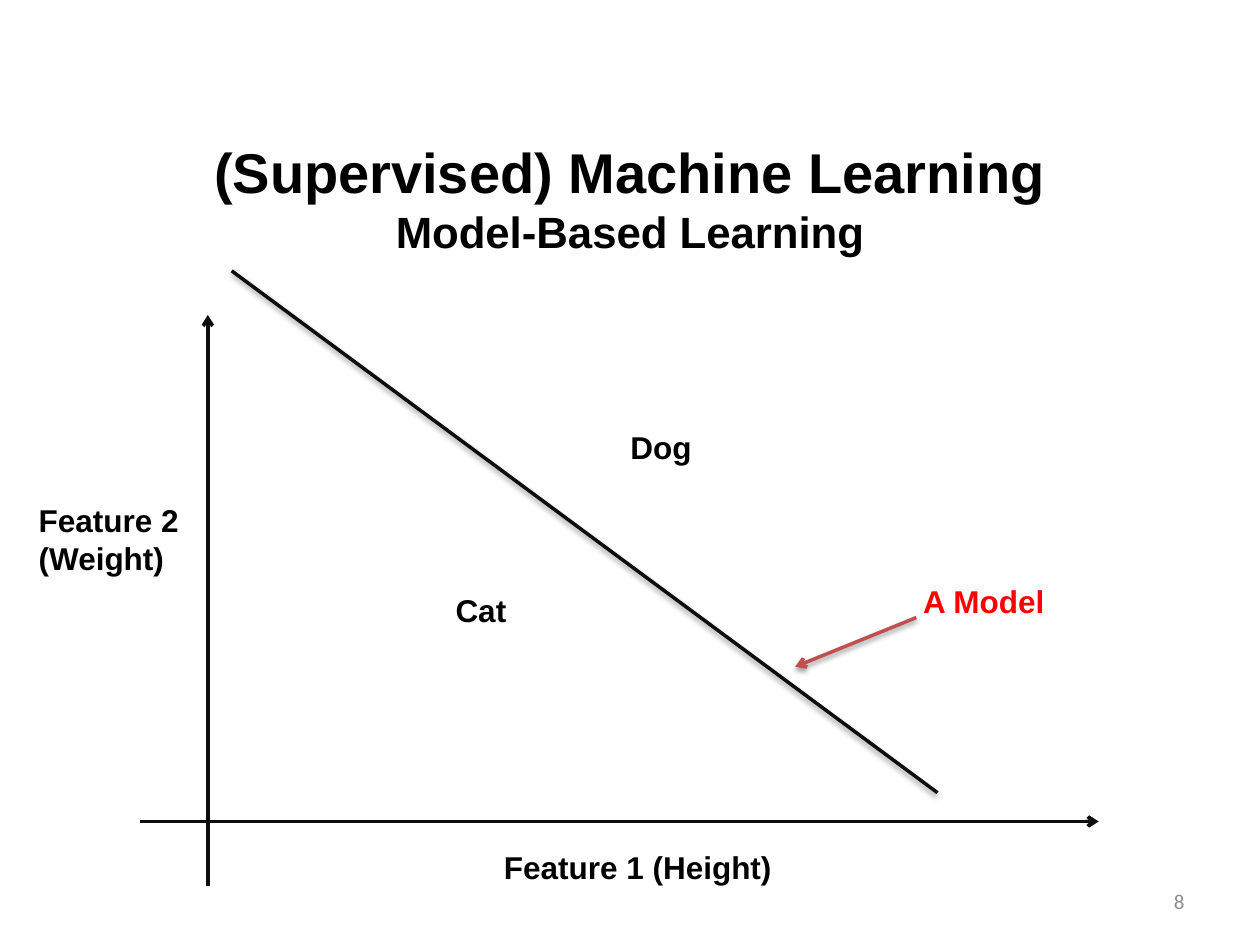
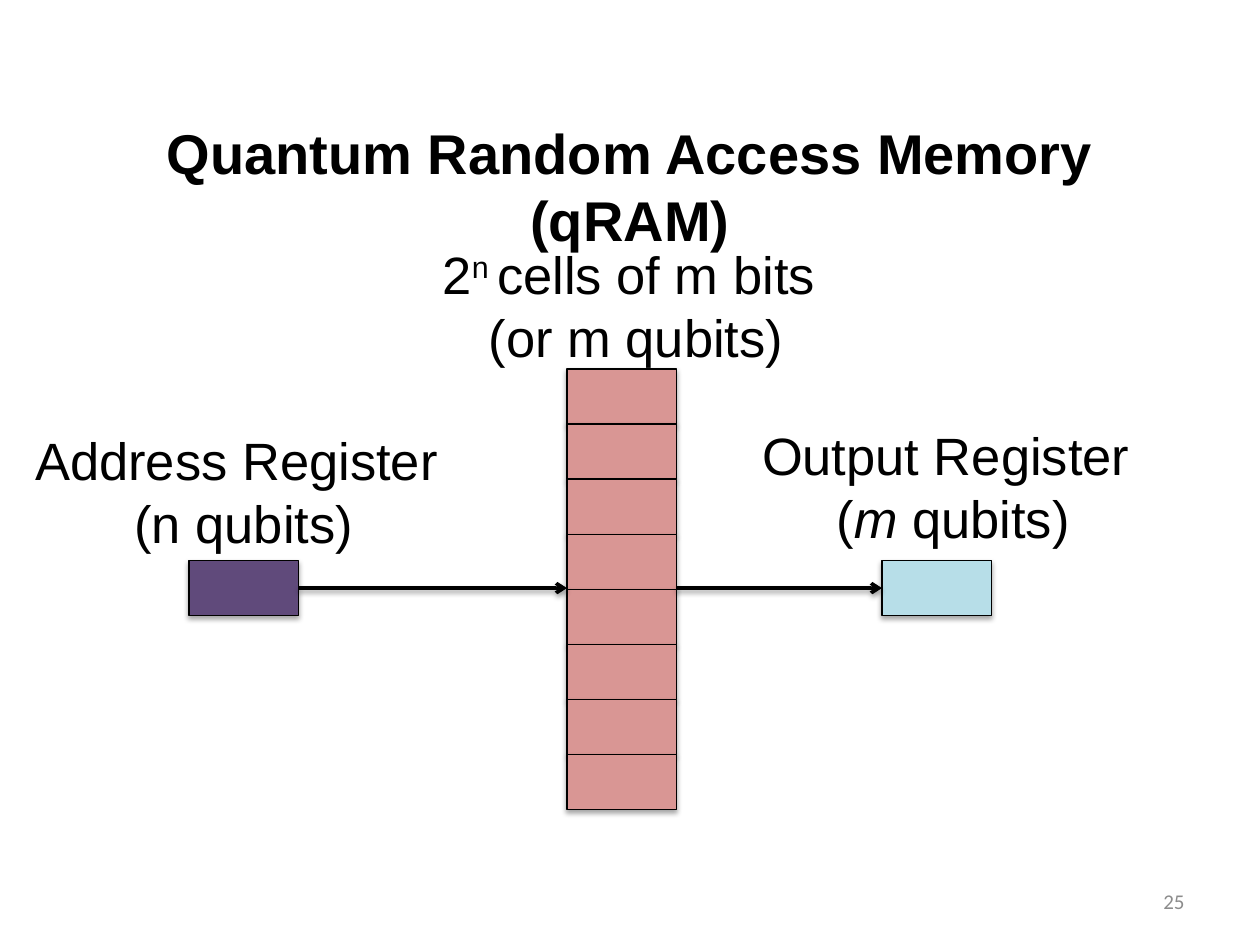
from dataclasses import dataclass

from lxml import etree
from pptx import Presentation
from pptx.dml.color import RGBColor
from pptx.enum.shapes import MSO_CONNECTOR, MSO_SHAPE
from pptx.enum.text import MSO_ANCHOR, PP_ALIGN
from pptx.oxml.ns import qn
from pptx.shapes.autoshape import Shape
from pptx.shapes.connector import Connector
from pptx.slide import Slide
from pptx.util import Cm, Pt

COLORS = {
    "text": "000000",
    "number": "8C8C8C",
    "axis": "0D0D0D",
    "model": "FF0000",
    "pointer": "C0504D",
    "outline": "000000",
    "cell": "D99694",
    "address": "604A7B",
    "output": "B7DEE8",
}
CELL_WIDTH, CELL_HEIGHT = 2.21, 1.11
CELL_COUNT = 8
MEMORY_LEFT, MEMORY_TOP = 11.43, 7.44
REGISTER_TOP = 11.3


@dataclass(frozen=True)
class Span:
    text: str
    size: float | None = None
    italic: bool = False
    raised: bool = False


@dataclass(frozen=True)
class Label:
    left: float
    top: float
    width: float
    height: float
    lines: list[list[Span]]
    size: float = 18
    color: str = "text"
    bold: bool = True
    font: str = "Arial"
    align: PP_ALIGN = PP_ALIGN.CENTER
    anchor: MSO_ANCHOR = MSO_ANCHOR.TOP
    wrap: bool = True


@dataclass(frozen=True)
class Stroke:
    start: tuple[float, float]
    end: tuple[float, float]
    color: str = "axis"
    arrow: bool = True
    shadow: bool = False


def rgb(name: str) -> RGBColor:
    return RGBColor.from_string(COLORS[name])


def set_effects(item: Shape | Connector, shadow: bool, opacity: int) -> None:
    effects = etree.SubElement(item._element.spPr, qn("a:effectLst"))
    if shadow:
        outer = etree.SubElement(
            effects, qn("a:outerShdw"), blurRad=str(Pt(3.1)), dist=str(Pt(1.7)),
            dir="5400000", rotWithShape="0")
        black = etree.SubElement(outer, qn("a:srgbClr"), val=COLORS["outline"])
        etree.SubElement(black, qn("a:alpha"), val=str(opacity * 1000))


def draw_label(slide: Slide, label: Label) -> None:
    frame = slide.shapes.add_textbox(
        Cm(label.left), Cm(label.top), Cm(label.width), Cm(label.height)).text_frame
    frame.word_wrap = label.wrap
    frame.vertical_anchor = label.anchor
    for index, spans in enumerate(label.lines):
        paragraph = frame.add_paragraph() if index else frame.paragraphs[0]
        paragraph.alignment = label.align
        for span in spans:
            if span.text == "\v":
                paragraph.add_line_break()
                continue
            run = paragraph.add_run()
            run.text = span.text
            run.font.name = label.font
            run.font.size = Pt(span.size or label.size)
            run.font.bold = label.bold
            run.font.italic = span.italic
            run.font.color.rgb = rgb(label.color)
            if span.raised:
                run.font._element.set("baseline", "30000")


def draw_stroke(slide: Slide, stroke: Stroke) -> Connector:
    connector = slide.shapes.add_connector(
        MSO_CONNECTOR.STRAIGHT, *map(Cm, stroke.start + stroke.end))
    connector.line.color.rgb = rgb(stroke.color)
    connector.line.width = Pt(2)
    if stroke.arrow:
        outline = connector._element.spPr.find(qn("a:ln"))
        etree.SubElement(outline, qn("a:tailEnd"), type="arrow")
    set_effects(connector, stroke.shadow, 38)
    return connector


def draw_cell(slide: Slide, left: float, top: float, color: str) -> Shape:
    cell = slide.shapes.add_shape(
        MSO_SHAPE.RECTANGLE, Cm(left), Cm(top), Cm(CELL_WIDTH), Cm(CELL_HEIGHT))
    cell.fill.solid()
    cell.fill.fore_color.rgb = rgb(color)
    cell.line.color.rgb = rgb("outline")
    cell.line.width = Pt(0.75)
    set_effects(cell, True, 35)
    return cell


def start_slide(deck: Presentation, title: list[Span], title_top: float, number: str) -> Slide:
    slide = deck.slides.add_slide(deck.slide_layouts[6])
    draw_label(slide, Label(1.27, title_top, 22.86, 2.97, [title], size=32,
                            anchor=MSO_ANCHOR.MIDDLE))
    draw_label(slide, Label(18.21, 17.65, 5.92, 1.02, [[Span(number)]], size=12,
                            color="number", bold=False, font="Calibri",
                            align=PP_ALIGN.RIGHT, anchor=MSO_ANCHOR.MIDDLE))
    return slide


def build_model_slide(deck: Presentation) -> None:
    title = [Span("(Supervised) Machine Learning"), Span("\v"),
             Span("Model-Based Learning", size=25)]
    slide = start_slide(deck, title, 2.49, "8")
    for stroke in (
        Stroke((2.82, 16.56), (22.15, 16.56)),
        Stroke((4.19, 17.86), (4.19, 6.35)),
        Stroke((4.67, 5.46), (18.9, 15.98), arrow=False, shadow=True),
        Stroke((18.47, 12.45), (16.03, 13.44), color="pointer", shadow=True),
    ):
        draw_stroke(slide, stroke)
    for label in (
        Label(7.65, 11.79, 4.09, 1.02, [[Span("Cat")]]),
        Label(11.28, 8.51, 4.09, 1.02, [[Span("Dog")]]),
        Label(18.36, 11.61, 3.05, 1.02, [[Span("A Model")]], color="model",
              align=PP_ALIGN.LEFT, wrap=False),
        Label(9.91, 16.97, 5.97, 1.02, [[Span("Feature 1 (Height)")]],
              align=PP_ALIGN.LEFT, wrap=False),
    ):
        draw_label(slide, label)
    weight = Label(0.53, 9.98, 3.35, 1.8, [[Span("Feature 2 ")], [Span("(Weight)")]],
                   align=PP_ALIGN.LEFT, wrap=False)
    draw_label(slide, weight)


def build_memory_slide(deck: Presentation) -> None:
    slide = start_slide(deck, [Span("Quantum Random Access Memory (qRAM)")], 2.26, "25")
    for row in range(CELL_COUNT):
        draw_cell(slide, MEMORY_LEFT, MEMORY_TOP + row * CELL_HEIGHT, "cell")
    address = draw_cell(slide, 3.81, REGISTER_TOP, "address")
    output = draw_cell(slide, 17.78, REGISTER_TOP, "output")
    for left, top, width, lines in (
        (6.5, 4.75, 12.65, [[Span("2"), Span("n ", raised=True), Span("cells of m bits ")],
                            [Span("(or m qubits)")]]),
        (-0.66, 8.51, 11.15, [[Span("Address Register ")], [Span("(n qubits)")]]),
        (13.64, 8.41, 11.15, [[Span("Output Register ")],
                              [Span("("), Span("m ", italic=True), Span("qubits)")]]),
    ):
        draw_label(slide, Label(left, top, width, 2.82, lines, size=30, bold=False))
    middle = REGISTER_TOP + CELL_HEIGHT / 2
    query = draw_stroke(slide, Stroke((3.81 + CELL_WIDTH, middle), (MEMORY_LEFT, middle),
                                      color="outline", shadow=True))
    query.begin_connect(address, 3)
    answer = draw_stroke(slide, Stroke((MEMORY_LEFT + CELL_WIDTH, middle), (17.78, middle),
                                       color="outline", shadow=True))
    answer.end_connect(output, 1)


def main() -> None:
    deck = Presentation()
    deck.slide_width, deck.slide_height = Cm(25.4), Cm(19.05)
    build_model_slide(deck)
    build_memory_slide(deck)
    deck.save("out.pptx")


if __name__ == "__main__":
    main()
